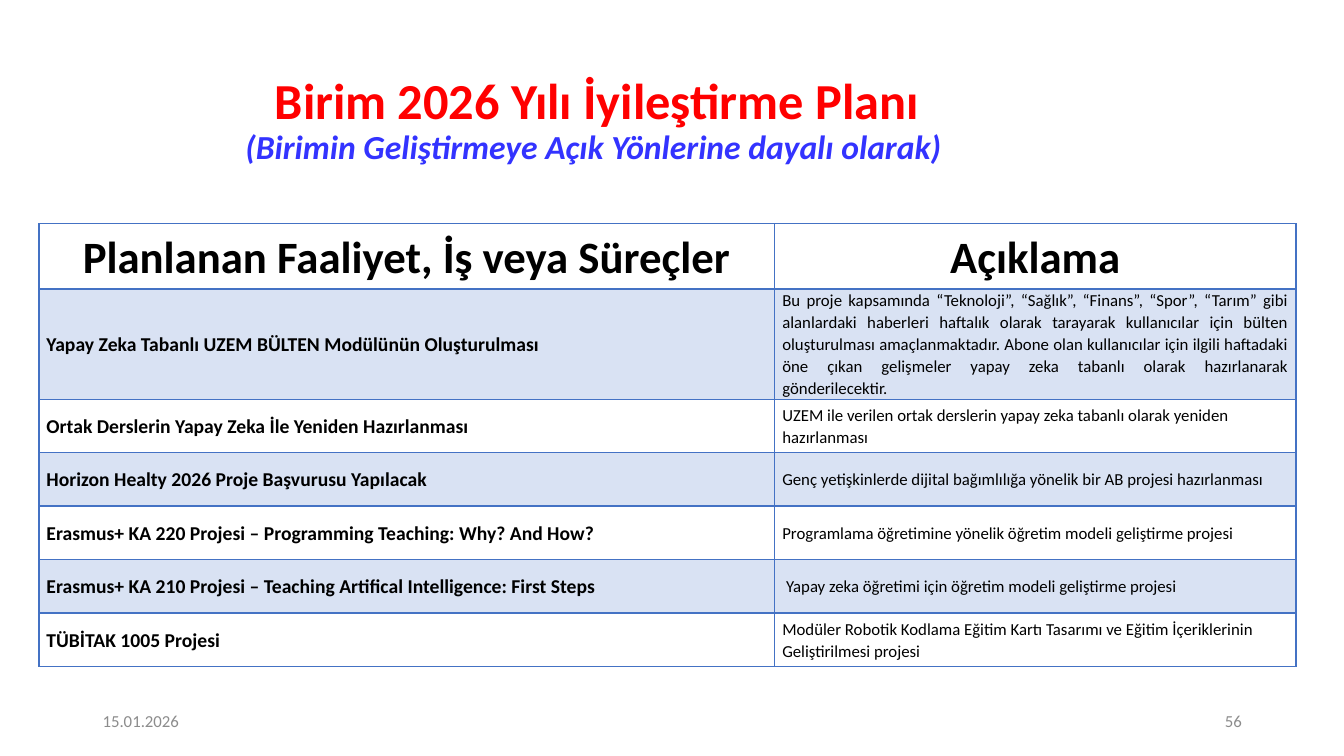
from typing import NamedTuple

from lxml import etree
from pptx import Presentation
from pptx.dml.color import RGBColor
from pptx.enum import text
from pptx.oxml import ns
from pptx.util import Pt

FONT = "Calibri"
BLUE = "4472C4"
BLACK = "000000"
HEADER_HEIGHT, ROW_HEIGHT, TALL_ROW_HEIGHT = 46.8, 38.2, 78.5
COLUMN_WIDTHS = (525.6, 372.3)
ALIGN = text.PP_ALIGN


class Style(NamedTuple):
    size: float
    color: str = BLACK
    bold: bool = False
    italic: bool = False


class Activity(NamedTuple):
    name: str
    description: str
    height: float = ROW_HEIGHT
    align: ALIGN = ALIGN.LEFT


class FooterItem(NamedTuple):
    wording: str
    left: float
    align: ALIGN


HEADER_STYLE = Style(32, bold=True)
NAME_STYLE = Style(14, bold=True)
DESCRIPTION_STYLE = Style(12)
FOOTER_STYLE = Style(12, "8C8C8C")

TITLE_LINES = (
    ("Birim 2026 Yılı İyileştirme Planı", Style(36, "FF0000", True)),
    ("(Birimin Geliştirmeye Açık Yönlerine dayalı olarak) ", Style(24, "3333FF", True, True)),
)
HEADERS = ("Planlanan Faaliyet, İş veya Süreçler", "Açıklama")
ACTIVITIES = (
    Activity(
        "Yapay Zeka Tabanlı UZEM BÜLTEN Modülünün Oluşturulması",
        "Bu proje kapsamında “Teknoloji”, “Sağlık”, “Finans”, “Spor”, “Tarım” gibi alanlardaki "
        "haberleri haftalık olarak tarayarak kullanıcılar için bülten oluşturulması "
        "amaçlanmaktadır. Abone olan kullanıcılar için ilgili haftadaki öne çıkan gelişmeler "
        "yapay zeka tabanlı olarak hazırlanarak gönderilecektir.",
        TALL_ROW_HEIGHT,
        ALIGN.JUSTIFY,
    ),
    Activity(
        "Ortak Derslerin Yapay Zeka İle Yeniden Hazırlanması",
        "UZEM ile verilen ortak derslerin yapay zeka tabanlı olarak yeniden hazırlanması",
    ),
    Activity(
        "Horizon Healty 2026 Proje Başvurusu Yapılacak",
        "Genç yetişkinlerde dijital bağımlılığa yönelik bir AB projesi hazırlanması",
    ),
    Activity(
        "Erasmus+ KA 220 Projesi – Programming Teaching: Why? And How?",
        "Programlama öğretimine yönelik öğretim modeli geliştirme projesi",
    ),
    Activity(
        "Erasmus+ KA 210 Projesi – Teaching Artifical Intelligence: First Steps",
        " Yapay zeka öğretimi için öğretim modeli geliştirme projesi",
    ),
    Activity(
        "TÜBİTAK 1005 Projesi",
        "Modüler Robotik Kodlama Eğitim Kartı Tasarımı ve Eğitim İçeriklerinin "
        "Geliştirilmesi projesi",
    ),
)
FOOTER = (
    FooterItem("15.01.2026", 66.2, ALIGN.LEFT),
    FooterItem("56", 678.2, ALIGN.RIGHT),
)


def set_color(color_format, value: str) -> None:
    color_format.rgb = RGBColor.from_string(value)


def set_font(font, style: Style) -> None:
    font.name = FONT
    font.size = Pt(style.size)
    font.bold = style.bold
    font.italic = style.italic
    font.fill.solid()
    set_color(font.fill.fore_color, style.color)


def add_borders(cell, bottom_width: float) -> None:
    properties = cell._tc.get_or_add_tcPr()
    for side in "LRTB":
        width = bottom_width if side == "B" else 1
        line = etree.SubElement(properties, ns.qn(f"a:ln{side}"), w=str(Pt(width)))
        fill = etree.SubElement(line, ns.qn("a:solidFill"))
        etree.SubElement(fill, ns.qn("a:srgbClr"), val=BLUE)


def fill_band(cell, shaded: bool) -> None:
    """Tint the cell with 20 % blue, or leave it clear."""
    if not shaded:
        cell.fill.background()
        return
    cell.fill.solid()
    set_color(cell.fill.fore_color, BLUE)
    color = cell._tc.tcPr.find(ns.qn("a:solidFill")).find(ns.qn("a:srgbClr"))
    etree.SubElement(color, ns.qn("a:alpha"), val="20000")


def write_cell(cell, wording: str, style: Style, align: ALIGN,
               shaded: bool = False, bottom_width: float = 1) -> None:
    cell.margin_left = cell.margin_right = Pt(5.4)
    cell.margin_top = cell.margin_bottom = Pt(0)
    cell.vertical_anchor = text.MSO_ANCHOR.MIDDLE
    paragraph = cell.text_frame.paragraphs[0]
    paragraph.text = wording
    paragraph.alignment = align
    paragraph.line_spacing = 1.07
    set_font(paragraph.font, style)
    add_borders(cell, bottom_width)
    fill_band(cell, shaded)


def write_title(slide) -> None:
    title = slide.shapes.title
    title.left, title.top, title.width, title.height = Pt(21.6), Pt(56.2), Pt(810), Pt(60.5)
    frame = title.text_frame
    frame.auto_size = text.MSO_AUTO_SIZE.NONE
    frame.vertical_anchor = text.MSO_ANCHOR.MIDDLE
    paragraph = frame.paragraphs[0]
    paragraph.alignment = ALIGN.CENTER
    paragraph.line_spacing = 0.9
    for index, (wording, style) in enumerate(TITLE_LINES):
        if index:
            paragraph.add_line_break()
        run = paragraph.add_run()
        run.text = wording
        set_font(run.font, style)


def add_plan_table(slide) -> None:
    heights = [HEADER_HEIGHT, *(activity.height for activity in ACTIVITIES)]
    table = slide.shapes.add_table(
        len(heights), len(COLUMN_WIDTHS), Pt(27.8), Pt(159.8),
        Pt(sum(COLUMN_WIDTHS)), Pt(sum(heights))).table
    table.first_row = table.horz_banding = False
    for column, width in zip(table.columns, COLUMN_WIDTHS):
        column.width = Pt(width)
    for row, height in zip(table.rows, heights):
        row.height = Pt(height)
    for index, wording in enumerate(HEADERS):
        write_cell(table.cell(0, index), wording, HEADER_STYLE, ALIGN.CENTER, bottom_width=2)
    for index, activity in enumerate(ACTIVITIES, start=1):
        shaded = index % 2 == 1
        write_cell(table.cell(index, 0), activity.name, NAME_STYLE, ALIGN.LEFT, shaded)
        write_cell(table.cell(index, 1), activity.description, DESCRIPTION_STYLE,
                   activity.align, shaded)


def add_footer_item(slide, item: FooterItem) -> None:
    frame = slide.shapes.add_textbox(Pt(item.left), Pt(500.4), Pt(216), Pt(28.8)).text_frame
    frame.word_wrap = True
    frame.vertical_anchor = text.MSO_ANCHOR.MIDDLE
    paragraph = frame.paragraphs[0]
    paragraph.text = item.wording
    paragraph.alignment = item.align
    set_font(paragraph.font, FOOTER_STYLE)


def main() -> None:
    presentation = Presentation()
    presentation.slide_width, presentation.slide_height = Pt(960), Pt(540)
    slide = presentation.slides.add_slide(presentation.slide_layouts.get_by_name("Title Only"))
    write_title(slide)
    add_plan_table(slide)
    for item in FOOTER:
        add_footer_item(slide, item)
    presentation.save("out.pptx")


if __name__ == "__main__":
    main()
